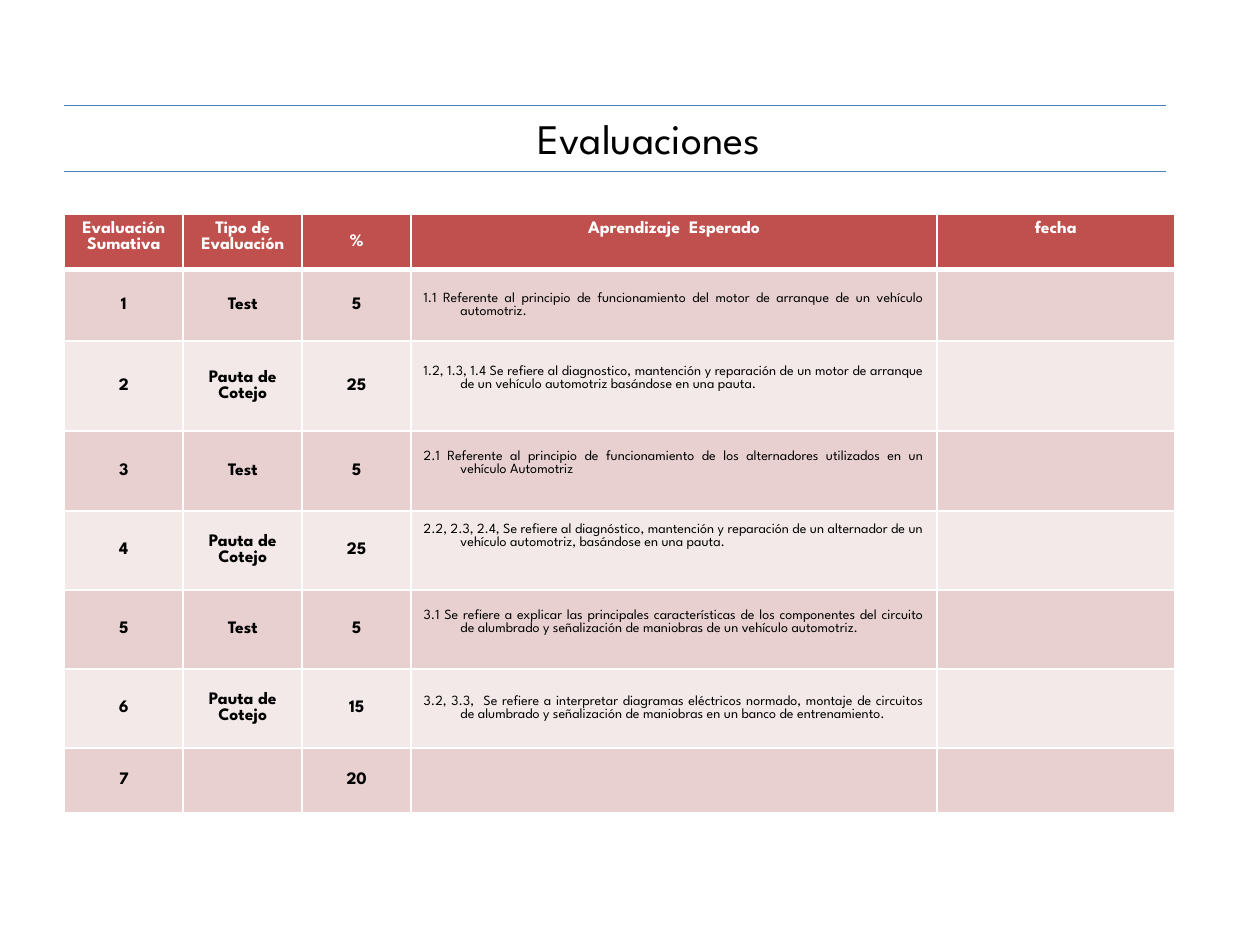
from dataclasses import dataclass
from typing import Any

from lxml import etree
from pptx import Presentation
from pptx import util as u
from pptx.dml.color import RGBColor
from pptx.enum import shapes, text
from pptx.oxml import ns

BLACK = RGBColor(0x00, 0x00, 0x00)
WHITE = RGBColor(0xFF, 0xFF, 0xFF)
BLUE = RGBColor(0x4B, 0x7E, 0xBC)
RED = RGBColor(0xC0, 0x50, 0x4D)
PINK = RGBColor(0xE8, 0xD0, 0xD0)
PALE = RGBColor(0xF4, 0xE9, 0xE9)

CENTER = text.PP_ALIGN.CENTER
MIDDLE = text.MSO_ANCHOR.MIDDLE

LEFT = 36.72
COLUMNS = [68, 68, 62.3, 300.4, 135.9]
HEIGHTS = [30.9, 41.1, 51.4, 45.7, 45.1, 45.1, 45.1, 37.1]
HEADERS = ["Evaluación Sumativa", "Tipo de Evaluación", "%",
           "Aprendizaje  Esperado", "fecha"]
TEST, CHECKLIST = "Test", "Pauta de Cotejo"

# Type, percentage, expected learning, extra room under the learning text
EVALUATIONS = [
    (TEST, "5", "1.1 Referente al principio de funcionamiento del motor de "
     "arranque de un vehículo automotriz.", 0),
    (CHECKLIST, "25", "1.2, 1.3, 1.4 Se refiere al diagnostico, mantención y "
     "reparación de un motor de arranque de un vehículo automotriz basándose "
     "en una pauta.", 9),
    (TEST, "5", "2.1 Referente al principio de funcionamiento de los "
     "alternadores utilizados en un vehículo Automotriz", 9),
    (CHECKLIST, "25", "2.2, 2.3, 2.4, Se refiere al diagnóstico, mantención y "
     "reparación de un alternador de un vehículo automotriz, basándose en "
     "una pauta.", 16),
    (TEST, "5", "3.1 Se refiere a explicar las principales características de "
     "los componentes del circuito de alumbrado y señalización de maniobras "
     "de un vehículo automotriz.", 7.5),
    (CHECKLIST, "15", "3.2, 3.3,  Se refiere a interpretar diagramas eléctricos "
     "normado, montaje de circuitos de alumbrado y señalización de maniobras "
     "en un banco de entrenamiento.", 0),
    ("", "20", "", 0),
]


@dataclass
class Deck:
    s: Any
    font: str = "League Spartan"

    def run(self, p, words, size, color=BLACK, bold=False):
        r = p.add_run()
        r.text = words
        r.font.name = self.font
        r.font.size = u.Pt(size)
        r.font.bold = bold
        r.font.color.rgb = color

    def title(self, words, x, y, w, h):
        sp = self.s.shapes.add_textbox(u.Pt(x), u.Pt(y), u.Pt(w), u.Pt(h))
        tf = sp.text_frame
        tf.word_wrap = True
        p = tf.paragraphs[0]
        p.alignment = CENTER
        self.run(p, words, 24)

    def rule(self, x, y, w):
        sp = self.s.shapes.add_connector(shapes.MSO_CONNECTOR.STRAIGHT,
                                         u.Pt(x), u.Pt(y), u.Pt(x + w), u.Pt(y))
        sp.line.color.rgb = BLUE
        sp.line.width = u.Pt(0.75)
        etree.SubElement(sp._element.spPr, ns.qn("a:effectLst"))

    def table(self, x, y, widths, heights):
        frame = self.s.shapes.add_table(
            len(heights), len(widths), u.Pt(x), u.Pt(y),
            u.Pt(sum(widths)), u.Pt(sum(heights)))
        for column, w in zip(frame.table.columns, widths):
            column.width = u.Pt(w)
        for row, h in zip(frame.table.rows, heights):
            row.height = u.Pt(h)
        return frame.table

    def cell(self, cell, fill, top=1, bottom=1):
        tcPr = cell._tc.get_or_add_tcPr()
        for side, width in zip("LRTB", (1, 1, top, bottom)):
            ln = etree.SubElement(tcPr, ns.qn("a:ln" + side), w=str(u.Pt(width)))
            solid = etree.SubElement(ln, ns.qn("a:solidFill"))
            etree.SubElement(solid, ns.qn("a:srgbClr"), val=str(WHITE))
        cell.fill.solid()
        cell.fill.fore_color.rgb = fill

    def label(self, cell, words, color=BLACK, anchor=MIDDLE):
        cell.vertical_anchor = anchor
        p = cell.text_frame.paragraphs[0]
        p.alignment = CENTER
        self.run(p, words, 10, color, bold=True)

    def learning(self, cell, words, below):
        cell.vertical_anchor = MIDDLE
        cell.margin_bottom = u.Pt(3.6 + below)
        p = cell.text_frame.paragraphs[0]
        p.alignment = text.PP_ALIGN.JUSTIFY
        pPr = p._p.get_or_add_pPr()
        pPr.set("marL", str(u.Pt(21)))
        pPr.set("indent", str(-u.Pt(21)))
        self.run(p, words, 8)


def main():
    prs = Presentation()
    prs.slide_width, prs.slide_height = u.Pt(720), u.Pt(540)
    deck = Deck(prs.slides.add_slide(prs.slide_layouts[6]))

    # Title between two rules
    deck.title("Evaluaciones", 95.76, 60.48, 550, 36)
    for y in (60.48, 97.92):
        deck.rule(LEFT, y, 629.3)

    # Table header
    table = deck.table(LEFT, 122.6, COLUMNS, HEIGHTS)
    for i, words in enumerate(HEADERS):
        cell = table.cell(0, i)
        deck.cell(cell, RED, bottom=3)
        anchor = MIDDLE if words == "%" else text.MSO_ANCHOR.TOP
        deck.label(cell, words, WHITE, anchor)

    # One row per evaluation, in alternating tints
    for n, (kind, percent, words, below) in enumerate(EVALUATIONS, 1):
        cells = table.rows[n].cells
        for cell in cells:
            deck.cell(cell, PINK if n % 2 else PALE, top=3 if n == 1 else 1)
        for cell, value in zip(cells, (str(n), kind, percent)):
            if value:
                deck.label(cell, value)
        if words:
            deck.learning(cells[3], words, below)

    prs.save("out.pptx")


if __name__ == "__main__":
    main()
